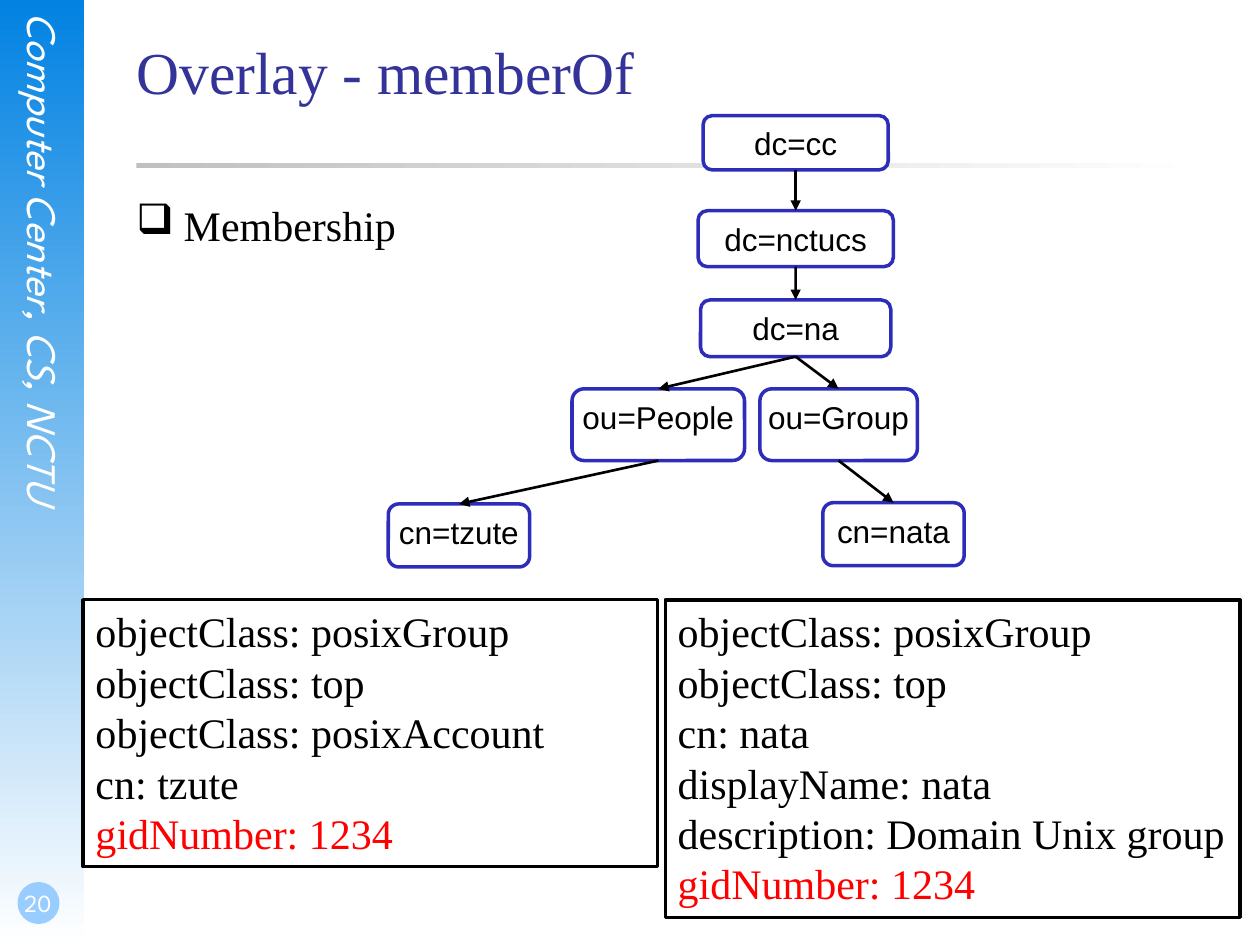
from lxml.etree import SubElement
from pptx import Presentation
from pptx.dml.color import RGBColor
from pptx.enum.shapes import MSO_CONNECTOR as Connector, MSO_SHAPE as Shape
from pptx.enum.text import MSO_ANCHOR as Anchor, PP_ALIGN as Align
from pptx.oxml.ns import qn
from pptx.util import Pt

WHITE = RGBColor(255, 255, 255)
BLACK = RGBColor(0, 0, 0)
RED = RGBColor(255, 0, 0)
SKY = RGBColor(0x02, 0x82, 0xE2)
PALE_BLUE = RGBColor(0x99, 0xCC, 0xFF)
SILVER = RGBColor(0xC0, 0xC0, 0xC0)
TITLE_BLUE = RGBColor(0x33, 0x33, 0x99)
NODE_BLUE = RGBColor(0x2D, 0x2D, 0xB9)

SERIF, SANS, BRAND = "Times New Roman", "Arial", "League Spartan"

NODES = {
    "dc=cc": (401.8, 66.1, 105.8, 31),
    "dc=nctucs": (398.9, 120.4, 111.6, 32),
    "dc=na": (400.3, 171.4, 108.7, 32.4),
    "ou=People": (326.9, 222.2, 98.6, 41),
    "ou=Group": (434.2, 222.2, 90, 41),
    "cn=tzute": (221.9, 288, 80.8, 36),
    "cn=nata": (470.2, 287.3, 80.8, 36),
}
EDGES = [
    ("dc=cc", "dc=nctucs"),
    ("dc=nctucs", "dc=na"),
    ("dc=na", "ou=People"),
    ("dc=na", "ou=Group"),
    ("ou=People", "cn=tzute"),
    ("ou=Group", "cn=nata"),
]
USER_ENTRY = ["objectClass: posixGroup", "objectClass: top",
              "objectClass: posixAccount", "cn: tzute", "gidNumber: 1234"]
GROUP_ENTRY = ["objectClass: posixGroup", "objectClass: top", "cn: nata",
               "displayName: nata", "description: Domain Unix group",
               "gidNumber: 1234"]


def write(frame, text, font=SERIF, size=24, color=BLACK, italic=False,
          align=Align.LEFT, anchor=Anchor.TOP, margins=None, wrap=True,
          spacing=None):
    """Fill a text frame with one formatted paragraph per line."""
    frame.word_wrap = wrap
    frame.vertical_anchor = anchor
    if margins:
        (frame.margin_left, frame.margin_top,
         frame.margin_right, frame.margin_bottom) = map(Pt, margins)
    frame.text = text
    for paragraph in frame.paragraphs:
        paragraph.alignment = align
        if spacing:
            paragraph.line_spacing = Pt(spacing)
        for run in paragraph.runs:
            run.font.name = font
            run.font.size = Pt(size)
            run.font.italic = italic
            run.font.color.rgb = color


def add_label(slide, box, text, margins=(0, 0, 0, 0), **style):
    """Add a text box and return its frame."""
    frame = slide.shapes.add_textbox(*map(Pt, box)).text_frame
    write(frame, text, margins=margins, **style)
    return frame


def add_panel(slide, kind, box, fill, line=None):
    """Add a flat shape with a solid fill and an optional outline."""
    shape = slide.shapes.add_shape(kind, *map(Pt, box))
    shape.shadow.inherit = False
    shape.fill.solid()
    shape.fill.fore_color.rgb = fill
    if line is None:
        shape.line.fill.background()
    else:
        shape.line.color.rgb = line
        shape.line.width = Pt(2)
    return shape


def add_fade(slide, box, color, angle):
    """Add a rectangle that fades from a colour to white."""
    shape = add_panel(slide, Shape.RECTANGLE, box, color)
    shape.fill.gradient()
    shape.fill.gradient_angle = angle
    for stop, stop_color in zip(shape.fill.gradient_stops, (color, WHITE)):
        stop.color.rgb = stop_color


def add_node(slide, name):
    """Add one directory tree node."""
    shape = add_panel(slide, Shape.ROUNDED_RECTANGLE, NODES[name], WHITE, NODE_BLUE)
    write(shape.text_frame, name, font=SANS, size=18, align=Align.CENTER, wrap=False)


def add_edge(slide, parent, child):
    """Join the bottom of a parent node to the top of its child."""
    left, top, width, height = NODES[parent]
    child_left, child_top, child_width, _ = NODES[child]
    ends = (left + width / 2, top + height, child_left + child_width / 2, child_top)
    connector = slide.shapes.add_connector(Connector.STRAIGHT, *map(Pt, ends))
    connector.line.color.rgb = BLACK
    connector.line.width = Pt(1.5)
    properties = connector.element.spPr
    SubElement(properties.find(qn("a:ln")), qn("a:tailEnd"), type="triangle")
    SubElement(properties, qn("a:effectLst"))


def add_entry(slide, left, lines):
    """Add a boxed directory entry whose last attribute is red."""
    box = (left, 342.7, 328.3, 29.05 * len(lines) + 7.2)
    shape = add_panel(slide, Shape.RECTANGLE, box, WHITE, BLACK)
    write(shape.text_frame, "\n".join(lines), spacing=28.8)
    shape.text_frame.paragraphs[-1].runs[0].font.color.rgb = RED


def add_bullet(paragraph, character, indent):
    """Give a paragraph a hanging bullet."""
    properties = paragraph._p.get_or_add_pPr()
    properties.set("marL", str(Pt(indent)))
    properties.set("indent", str(-Pt(indent)))
    SubElement(properties, qn("a:buChar"), char=character)


def add_frame(slide):
    """Add the side band, page number and title rule."""
    add_fade(slide, (0, 0, 48, 540), SKY, 270)
    band = add_label(slide, (10.8, 7.2, 28.8, 368), "Computer Center, CS, NCTU",
                     font=BRAND, color=WHITE, italic=True)
    band._txBody.bodyPr.set("vert", "eaVert")
    add_panel(slide, Shape.OVAL, (10, 504, 24, 24), PALE_BLUE)
    add_label(slide, (0, 492, 42, 36), "20", font=BRAND, size=14, color=WHITE,
              align=Align.CENTER, anchor=Anchor.BOTTOM, margins=(1.44, 0, 0, 3.6))
    add_fade(slide, (78, 93, 612, 3), SILVER, 0)


def main():
    """Build and save the slide."""
    presentation = Presentation()
    presentation.slide_width, presentation.slide_height = Pt(720), Pt(540)
    slide = presentation.slides.add_slide(presentation.slide_layouts[6])
    add_frame(slide)
    add_label(slide, (78, 20, 612, 90), "Overlay - memberOf", size=34, color=TITLE_BLUE,
              spacing=40.8)
    body = add_label(slide, (78, 114, 612, 54), "Membership", spacing=28.8)
    add_bullet(body.paragraphs[0], "❑", 27)
    add_entry(slide, 380.2, GROUP_ENTRY)
    for name in NODES:
        add_node(slide, name)
    for parent, child in EDGES:
        add_edge(slide, parent, child)
    add_entry(slide, 47.5, USER_ENTRY)
    presentation.save("out.pptx")


if __name__ == "__main__":
    main()
